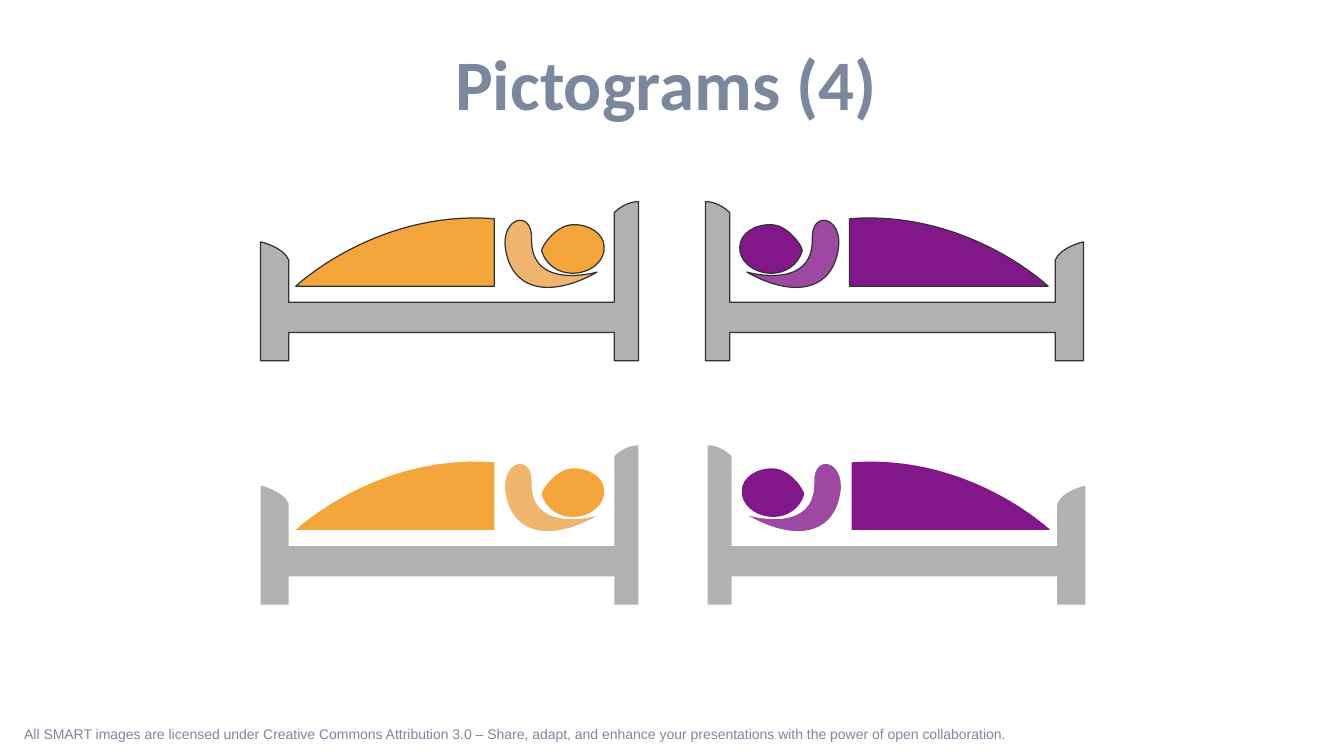
"""Build a slide with four pictograms of a person lying in bed."""
import pptx
import pptx.dml.color
import pptx.enum.text
import pptx.oxml.ns
import pptx.util
from lxml import etree
from pptx.util import Cm

COLORS = {
    "text": "7B879D",
    "outline": "333333",
    "frame": "B3B0B4",
    "orange": "F4A53B",
    "light orange": "EFB56F",
    "purple": "811788",
    "light purple": "9E49A1",
}
UNIT = Cm(0.0254)
CURVE_STEPS = 24
HEAD = [
    (66, 23),
    (83, 24, 97, 46, 96, 49),
    (92, 62, 80, 72, 63, 71),
    (46, 70, 33, 58, 34, 45),
    (34, 32, 49, 22, 66, 23),
]
ARM = [
    (41, 70),
    (41, 70, 107, 89, 106, 37),
    (105, 8, 136, 15, 132, 46),
    (126, 89, 87, 96, 41, 70),
]
FRAME = [
    (0, 0), (0, 158), (24, 158), (24, 130), (347, 130), (347, 158),
    (375, 158), (375, 40),
    (375, 40, 352, 45, 347, 58),
    (347, 100), (24, 100), (24, 11),
    (24, 11, 14, 0, 0, 0),
]
BLANKET = [(143, 17), (143, 84), (340, 84), (340, 84, 260, 8, 143, 17)]


def rgb(name):
    """Return the named colour."""
    return pptx.dml.color.RGBColor.from_string(COLORS[name])


def pairs(segment):
    """Split a flat segment into its points."""
    return list(zip(segment[::2], segment[1::2]))


def curve_points(start, segment):
    """Return points along a cubic curve, for measuring it."""
    controls = [start, *pairs(segment)]
    points = []
    for step in range(1, CURVE_STEPS + 1):
        t = step / CURVE_STEPS
        weights = ((1 - t) ** 3, 3 * t * (1 - t) ** 2, 3 * t * t * (1 - t), t ** 3)
        points.append(tuple(
            sum(weight * control[axis] for weight, control in zip(weights, controls))
            for axis in (0, 1)
        ))
    return points


def bounds(outline):
    """Return the near and far corners of an outline."""
    points = [outline[0]]
    for segment in outline[1:]:
        points += [segment] if len(segment) == 2 else curve_points(points[-1], segment)
    xs, ys = zip(*points)
    return (min(xs), min(ys)), (max(xs), max(ys))


def draw_path(path, segments):
    """Replace the content of a path with lines and cubic curves."""
    for child in list(path):
        path.remove(child)
    for index, segment in enumerate(segments):
        kind = "a:cubicBezTo" if len(segment) == 6 else "a:lnTo" if index else "a:moveTo"
        command = etree.SubElement(path, pptx.oxml.ns.qn(kind))
        for x, y in pairs(segment):
            etree.SubElement(command, pptx.oxml.ns.qn("a:pt"),
                             x=str(round(x)), y=str(round(y)))
    etree.SubElement(path, pptx.oxml.ns.qn("a:close"))


def add_outline(group, outline, left, top, direction, fill, outlined):
    """Add one filled freeform, mirrored when direction is -1."""
    mirrored = [
        tuple(value * UNIT * (1 if index % 2 else direction)
              for index, value in enumerate(segment))
        for segment in outline
    ]
    near, far = bounds(mirrored)
    builder = group.shapes.build_freeform(*near)
    builder.add_line_segments([far], close=True)
    shape = builder.convert_to_shape(left, top)
    draw_path(
        shape.element.find(".//" + pptx.oxml.ns.qn("a:path")),
        [[value - near[index % 2] for index, value in enumerate(segment)]
         for segment in mirrored],
    )
    shape.shadow.inherit = False
    shape.fill.solid()
    shape.fill.fore_color.rgb = rgb(fill)
    if outlined:
        shape.line.color.rgb = rgb("outline")
        shape.line.width = pptx.util.Pt(0.88)
    else:
        shape.line.fill.background()


def add_bed(slide, left, top, direction, color, outlined):
    """Add a grouped bed whose headboard corner is at left, top."""
    group = slide.shapes.add_group_shape()
    parts = [(HEAD, color), (ARM, f"light {color}"), (FRAME, "frame"), (BLANKET, color)]
    for outline, fill in parts:
        add_outline(group, outline, left, top, direction, fill, outlined)


def write_text(shape, text, *, font, size, bold=False, spacing=None,
               align=pptx.enum.text.PP_ALIGN.LEFT,
               anchor=pptx.enum.text.MSO_ANCHOR.TOP):
    """Write one formatted paragraph into a shape."""
    frame = shape.text_frame
    frame.word_wrap = True
    frame.auto_size = pptx.enum.text.MSO_AUTO_SIZE.NONE
    frame.vertical_anchor = anchor
    frame.text = text
    paragraph = frame.paragraphs[0]
    paragraph.alignment = align
    paragraph.line_spacing = spacing
    run_font = paragraph.runs[0].font
    run_font.name = font
    run_font.size = pptx.util.Pt(size)
    run_font.bold = bold
    run_font.color.rgb = rgb("text")


def main():
    """Build and save the presentation."""
    presentation = pptx.Presentation()
    presentation.slide_width = Cm(33.87)
    presentation.slide_height = Cm(19.05)
    slide = presentation.slides.add_slide(presentation.slide_layouts[5])

    title = slide.shapes.title
    title.left, title.top = Cm(0.95), Cm(0.22)
    title.width, title.height = Cm(31.68), Cm(3.71)
    write_text(title, "Pictograms (4)", font="Calibri", size=50.7, bold=True,
               align=pptx.enum.text.PP_ALIGN.CENTER,
               anchor=pptx.enum.text.MSO_ANCHOR.MIDDLE)

    license_box = slide.shapes.add_textbox(Cm(0.36), Cm(18.24), Cm(25.55), Cm(0.61))
    write_text(
        license_box,
        "All SMART images are licensed under Creative Commons Attribution 3.0 – "
        "Share, adapt, and enhance your presentations with the power of open "
        "collaboration.",
        font="Arial", size=10, spacing=0.8)

    for top, purple_left, outlined in ((5.08, 17.78, True), (11.22, 17.83, False)):
        add_bed(slide, Cm(purple_left), Cm(top), 1, "purple", outlined)
        add_bed(slide, Cm(16.09), Cm(top), -1, "orange", outlined)

    presentation.save("out.pptx")


if __name__ == "__main__":
    main()
